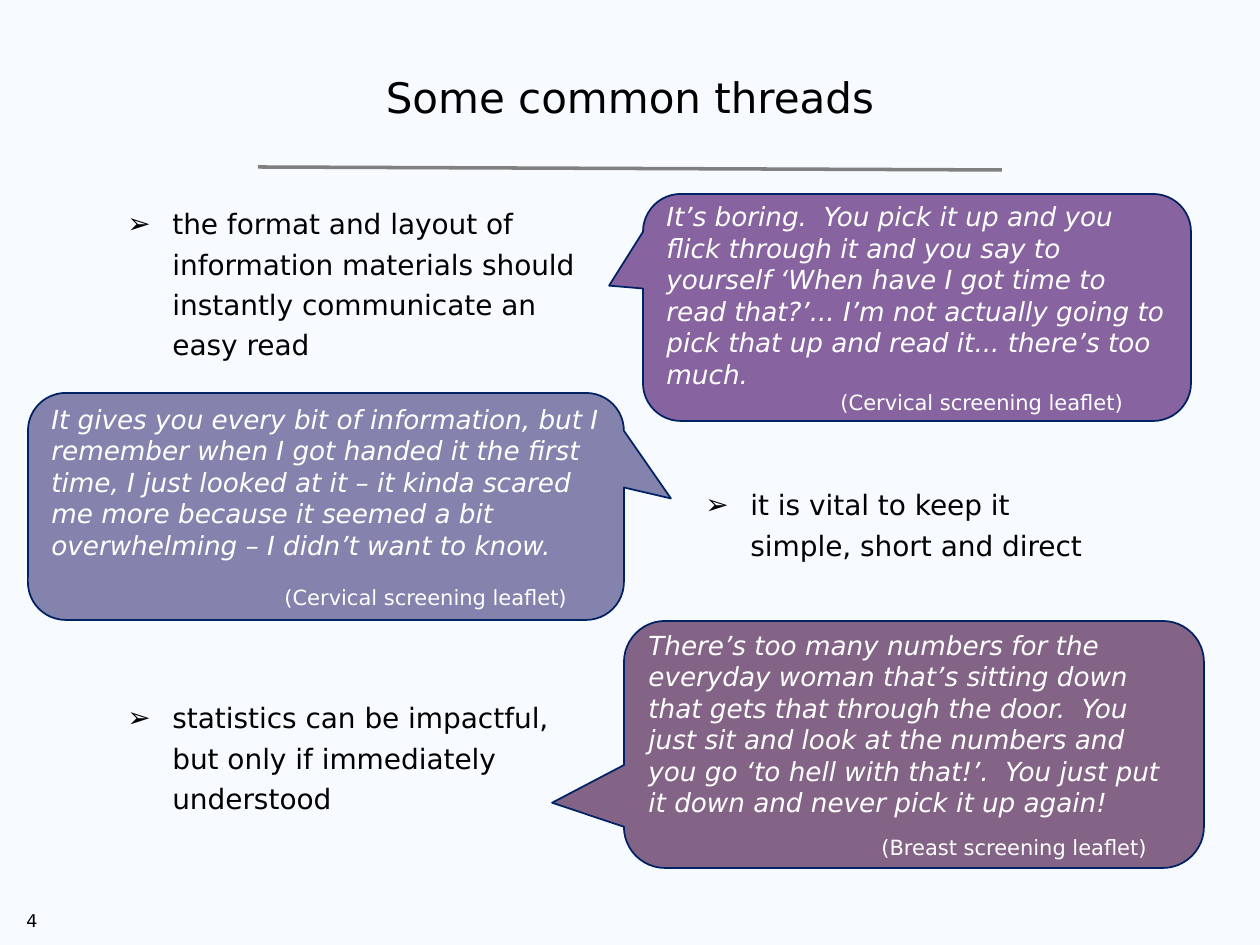
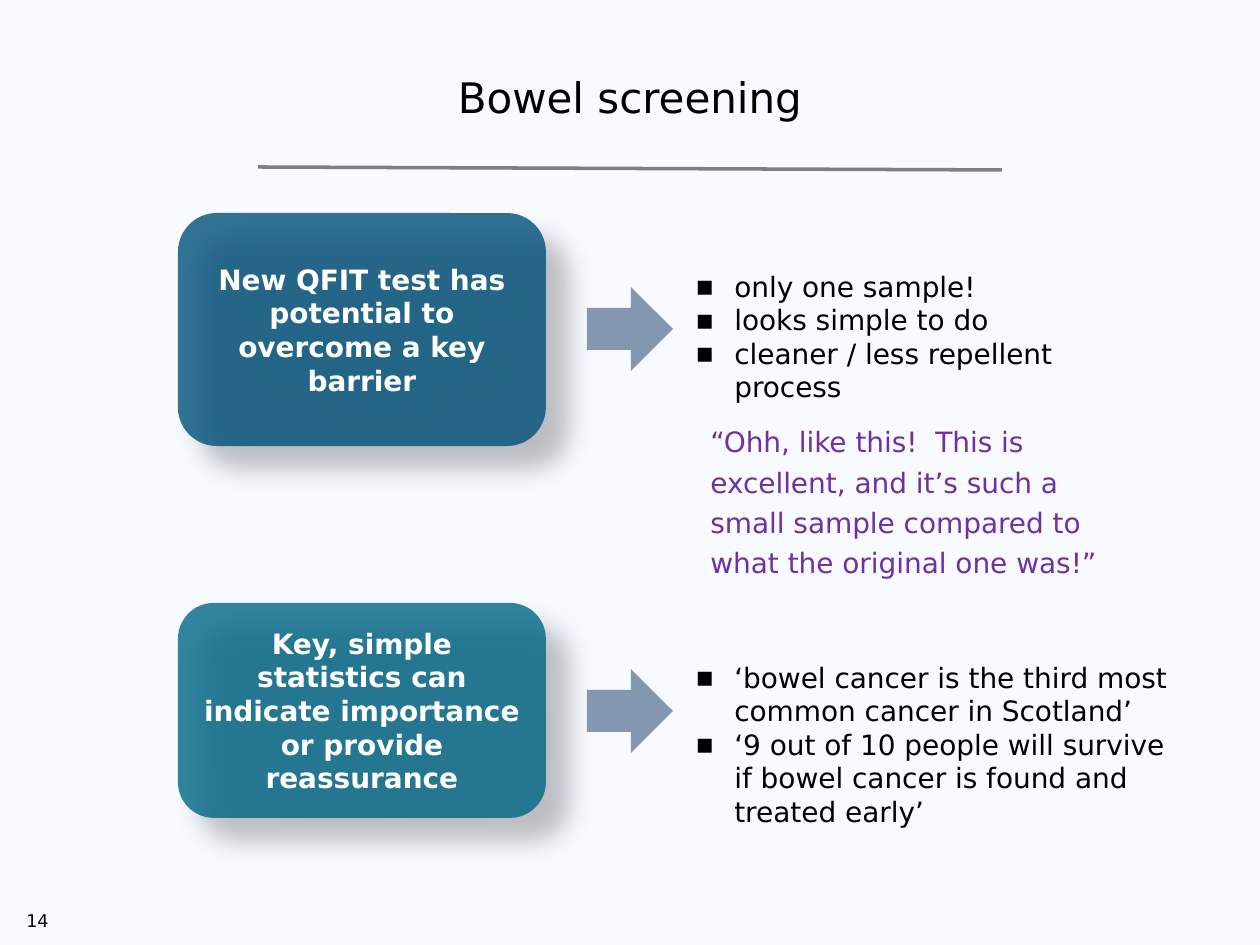
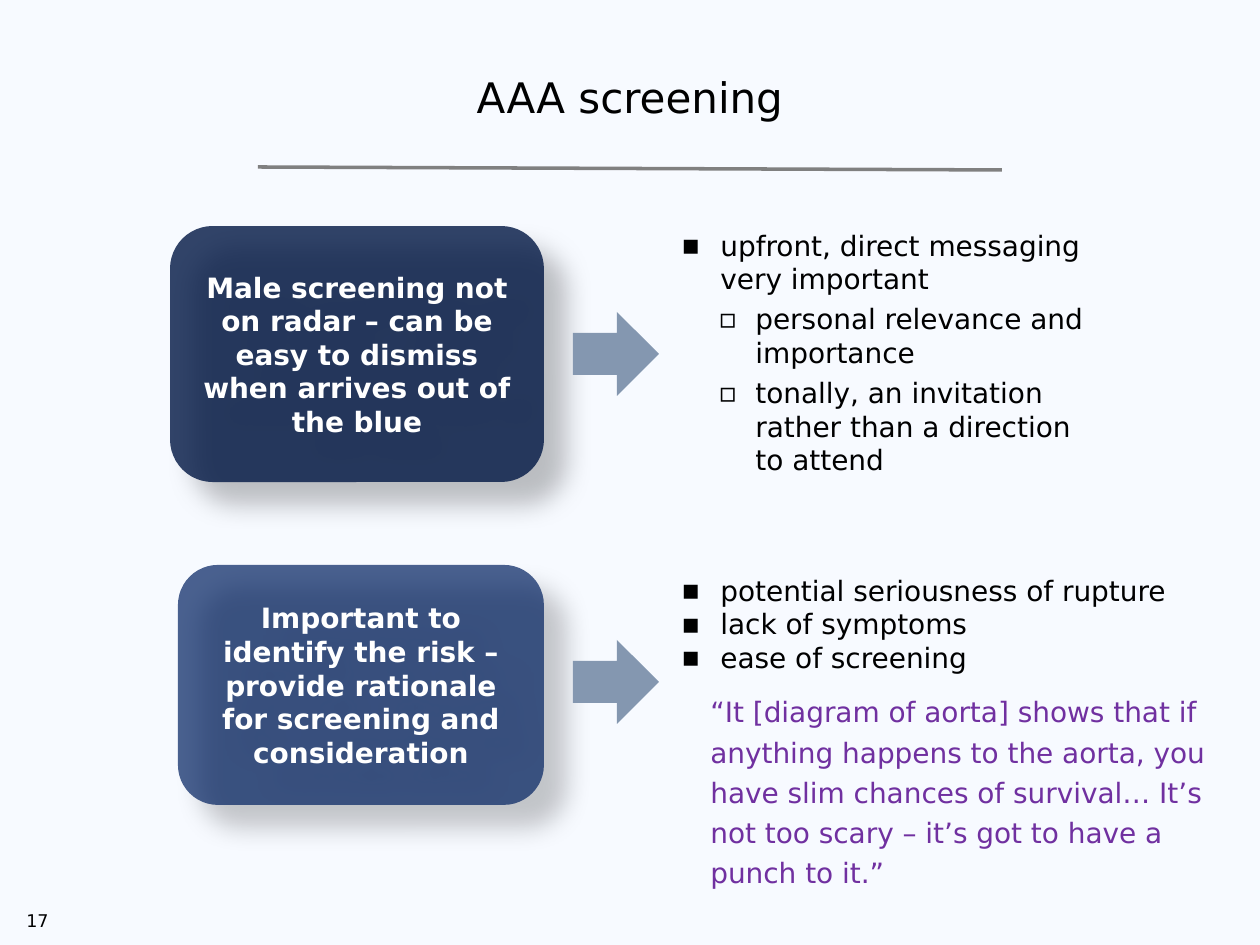
from lxml import etree
from pptx import Presentation
from pptx import util as u
from pptx.dml.color import RGBColor
from pptx.enum import shapes, text
from pptx.oxml import ns

PX = 914400 // 126


class Theme:
    font = "DejaVu Sans"
    background = "F7FAFF"
    ink = "000000"
    light = "FFFFFF"
    rule = "808080"
    outline = "002163"
    arrow = "8497B0"
    quote = "7030A0"
    title_size = 24
    body_size = 16
    callout_size = 15
    source_size = 12
    number_size = 10
    loose = 1.2
    bullets = {
        "➢": {"margin": 45, "hang": 45, "spacing": 1.2, "before": 9.6},
        "▪": {"margin": 39, "hang": 39, "spacing": 1.0, "before": 0},
        "▫": {"margin": 74, "hang": 37, "spacing": 1.0, "before": 3.8},
    }


def write(shape, lines, size, color, anchor=text.MSO_ANCHOR.TOP,
          align=text.PP_ALIGN.LEFT, spacing=1.0, bold=False):
    frame = shape.text_frame
    frame.text = "\n".join(lines)
    frame.word_wrap = True
    frame.vertical_anchor = anchor
    for paragraph in frame.paragraphs:
        paragraph.alignment = align
        paragraph.line_spacing = spacing
        for run in paragraph.runs:
            run.font.name = Theme.font
            run.font.size = u.Pt(size)
            run.font.bold = bold
            run.font.color.rgb = RGBColor.from_string(color)
    return frame.paragraphs


def add_panel(slide, preset, box, fill, opacity=100):
    shape = slide.shapes.add_shape(preset, *[length * PX for length in box])
    shape.shadow.inherit = False
    shape.line.fill.background()
    shape.fill.solid()
    shape.fill.fore_color.rgb = RGBColor.from_string(fill)
    if opacity < 100:
        color = shape.fill._xPr.find(".//" + ns.qn("a:srgbClr"))
        etree.SubElement(color, ns.qn("a:alpha"), val=str(opacity * 1000))
    return shape


presentation = Presentation()
presentation.slide_width = u.Inches(10)
presentation.slide_height = u.Inches(7.5)
middle = text.MSO_ANCHOR.MIDDLE
center = text.PP_ALIGN.CENTER

slides = []
for title, number in [("Some common threads", "4"), ("Bowel screening", "14"), ("AAA screening", "17")]:
    slide = presentation.slides.add_slide(presentation.slide_layouts[6])
    slides.append(slide)
    slide.background.fill.solid()
    slide.background.fill.fore_color.rgb = RGBColor.from_string(Theme.background)
    rule = slide.shapes.add_connector(
        shapes.MSO_CONNECTOR.STRAIGHT, 258 * PX, 167 * PX, 1002 * PX, 170 * PX)
    rule.line.color.rgb = RGBColor.from_string(Theme.rule)
    rule.line.width = u.Pt(2)
    etree.SubElement(rule._element.spPr, ns.qn("a:effectLst"))
    title_box = slide.shapes.add_textbox(87 * PX, 47 * PX, 1086 * PX, 105 * PX)
    write(title_box, [title], Theme.title_size, Theme.ink, middle, center, 0.9)
    number_box = slide.shapes.add_textbox(14 * PX, 896 * PX, 284 * PX, 50 * PX)
    write(number_box, [number], Theme.number_size, Theme.ink, middle)

threads, bowel, aaa = slides

callouts = [
    ((28, 393, 596, 227), "666699", 80, (0.579, -0.035), 233, 14,
     "It gives you every bit of information, but I remember when I got handed it the first time, "
     "I just looked at it – it kinda scared me more because it seemed a bit overwhelming – "
     "I didn’t want to know.",
     "(Cervical screening leaflet)"),
    ((643, 194, 548, 227), "3D015F", 60, (-0.562, -0.096), 174, 0,
     "It’s boring.  You pick it up and you flick through it and you say to yourself "
     "‘When have I got time to read that?’... I’m not actually going to pick that up "
     "and read it... there’s too much.",
     "(Cervical screening leaflet)"),
    ((624, 621, 580, 247), "360036", 60, (-0.624, 0.236), 233, 9.6,
     "There’s too many numbers for the everyday woman that’s sitting down that gets that "
     "through the door.  You just sit and look at the numbers and you go ‘to hell with that!’.  "
     "You just put it down and never pick it up again!",
     "(Breast screening leaflet)"),
]
for box, fill, opacity, tail, source_indent, source_gap, quote, source in callouts:
    callout = add_panel(threads, shapes.MSO_SHAPE.ROUNDED_RECTANGULAR_CALLOUT, box, fill, opacity)
    callout.adjustments[0], callout.adjustments[1] = tail
    callout.line.color.rgb = RGBColor.from_string(Theme.outline)
    callout.line.width = u.Pt(1)
    quote_line, source_line = write(
        callout, [quote, source], Theme.callout_size, Theme.light, middle)
    quote_line.runs[0].font.italic = True
    source_line.runs[0].font.size = u.Pt(Theme.source_size)
    source_line.space_before = u.Pt(source_gap)
    source_line._p.get_or_add_pPr().set("marL", str(source_indent * PX))

cards = [
    (bowel, (178, 213, 368, 233), "00517A", 80,
     "New QFIT test has potential to overcome a key barrier"),
    (bowel, (178, 603, 368, 215), "006686", 80,
     "Key, simple statistics can indicate importance or provide reassurance"),
    (aaa, (170, 226, 374, 256), "001643", 80,
     "Male screening not on radar – can be easy to dismiss when arrives out of the blue"),
    (aaa, (178, 565, 366, 240), "002060", 70,
     "Important to identify the risk – provide rationale for screening and consideration"),
]
for slide, box, fill, opacity, message in cards:
    card = add_panel(slide, shapes.MSO_SHAPE.ROUNDED_RECTANGLE, box, fill, opacity)
    write(card, [message], Theme.body_size, Theme.light, middle, center, bold=True)
    effects = card._element.spPr.find(ns.qn("a:effectLst"))
    shadow = etree.SubElement(
        effects, ns.qn("a:outerShdw"), blurRad=str(u.Pt(15)), dist=str(u.Pt(18)),
        dir=str(45 * 60000), algn="tl", rotWithShape="0")
    shadow_color = etree.SubElement(shadow, ns.qn("a:srgbClr"), val=Theme.ink)
    etree.SubElement(shadow_color, ns.qn("a:alpha"), val="30000")

for slide, left, top in [(bowel, 587, 287), (bowel, 587, 669), (aaa, 573, 312), (aaa, 573, 640)]:
    add_panel(slide, shapes.MSO_SHAPE.RIGHT_ARROW, (left, top, 86, 84), Theme.arrow)

bullet_lists = [
    (threads, (115, 194, 484, 175), [
        ("➢", "the format and layout of information materials should instantly communicate an easy read")]),
    (threads, (693, 475, 421, 53), [
        ("➢", "it is vital to keep it simple, short and direct")]),
    (threads, (115, 688, 490, 135), [
        ("➢", "statistics can be impactful, but only if immediately understood")]),
    (bowel, (683, 263, 441, 149), [
        ("▪", "only one sample!"),
        ("▪", "looks simple to do"),
        ("▪", "cleaner / less repellent process")]),
    (bowel, (683, 654, 503, 183), [
        ("▪", "‘bowel cancer is the third most common cancer in Scotland’"),
        ("▪", "‘9 out of 10 people will survive if bowel cancer is found and treated early’")]),
    (aaa, (669, 222, 447, 265), [
        ("▪", "upfront, direct messaging very important"),
        ("▫", "personal relevance and importance"),
        ("▫", "tonally, an invitation rather than a direction to attend")]),
    (aaa, (669, 567, 577, 115), [
        ("▪", "potential seriousness of rupture"),
        ("▪", "lack of symptoms"),
        ("▪", "ease of screening")]),
]
for slide, box, items in bullet_lists:
    list_box = slide.shapes.add_textbox(*[length * PX for length in box])
    paragraphs = write(list_box, [item for _, item in items], Theme.body_size, Theme.ink)
    for index, (paragraph, (symbol, _)) in enumerate(zip(paragraphs, items)):
        style = Theme.bullets[symbol]
        paragraph.line_spacing = style["spacing"]
        if index:
            paragraph.space_before = u.Pt(style["before"])
        properties = paragraph._p.get_or_add_pPr()
        properties.set("marL", str(style["margin"] * PX))
        properties.set("indent", str(-style["hang"] * PX))
        etree.SubElement(properties, ns.qn("a:buFont"), typeface=Theme.font)
        etree.SubElement(properties, ns.qn("a:buChar"), char=symbol)

quotes = [
    (bowel, (698, 412, 452, 175),
     "“Ohh, like this!  This is excellent, and it’s such a small sample compared to "
     "what the original one was!”"),
    (aaa, (698, 682, 541, 217),
     "“It [diagram of aorta] shows that if anything happens to the aorta, you have slim "
     "chances of survival… It’s not too scary – it’s got to have a punch to it.”"),
]
for slide, box, quote in quotes:
    quote_box = slide.shapes.add_textbox(*[length * PX for length in box])
    write(quote_box, [quote], Theme.body_size, Theme.quote, spacing=Theme.loose)

presentation.save("out.pptx")
